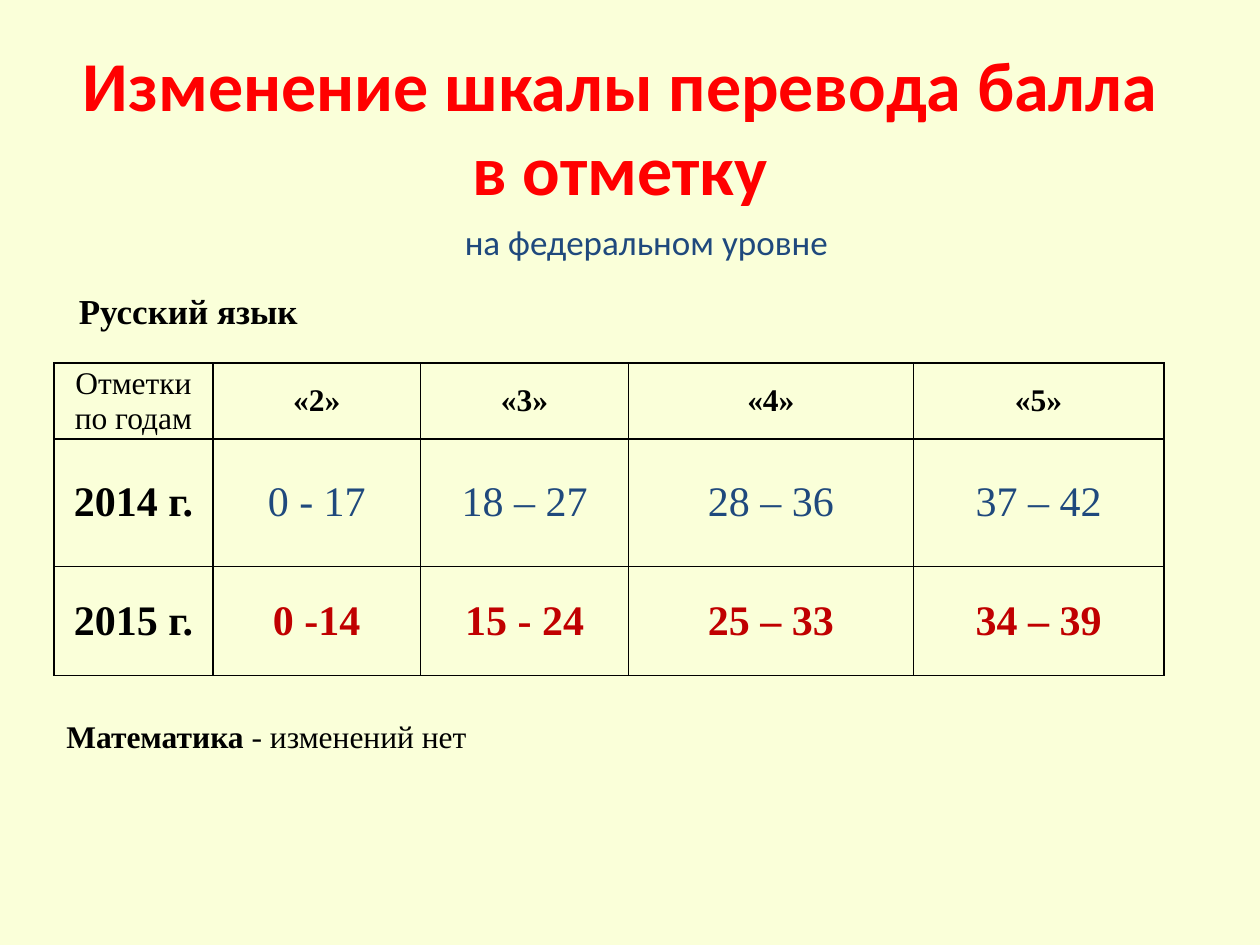
from lxml.etree import SubElement
from pptx import Presentation
from pptx.dml.color import RGBColor
from pptx.enum.text import MSO_ANCHOR, PP_ALIGN
from pptx.oxml.ns import qn
from pptx.util import Cm, Pt

CREAM = RGBColor(0xFA, 0xFF, 0xD9)
RED = RGBColor(0xFF, 0x00, 0x00)
DARK_RED = RGBColor(0xC0, 0x00, 0x00)
NAVY = RGBColor(0x1F, 0x49, 0x7D)
BLACK = RGBColor(0x00, 0x00, 0x00)
SANS, SERIF = "Calibri", "Times New Roman"

COLUMN_WIDTHS = (3.2, 4.19, 4.19, 5.74, 5.05)
ROW_HEIGHTS = (1.4, 2.57, 2.2)
GRADES = ("«2»", "«3»", "«4»", "«5»")
SCORES_2014 = ("0 - 17", "18 – 27", "28 – 36", "37 – 42")
SCORES_2015 = ("0 -14", "15 - 24", "25 – 33", "34 – 39")


def add_run(paragraph, text, size, color, font=SERIF, bold=False):
    run = paragraph.add_run()
    run.text = text
    run.font.name = font
    run.font.size = Pt(size)
    run.font.bold = bold
    run.font.color.rgb = color


def add_text(slide, box, runs, align=PP_ALIGN.LEFT, anchor=MSO_ANCHOR.TOP, wrap=True):
    """Place one paragraph in a box (left, top, width, height in cm)."""
    frame = slide.shapes.add_textbox(*map(Cm, box)).text_frame
    frame.word_wrap = wrap
    frame.vertical_anchor = anchor
    paragraph = frame.paragraphs[0]
    paragraph.alignment = align
    for run in runs:
        add_run(paragraph, **run)


def add_heading(slide, left, top, width):
    # Title, with the level it applies to underneath
    title = dict(text="Изменение шкалы перевода балла в отметку",
                 size=40, color=RED, font=SANS, bold=True)
    add_text(slide, (left, top, width, 3.23), [title],
             PP_ALIGN.CENTER, MSO_ANCHOR.BOTTOM)
    level = dict(text="на федеральном уровне", size=20, color=NAVY, font=SANS)
    add_text(slide, (left + 7.82, top + 3.2, 7.9, 1.12), [level], wrap=False)


def style_cell(cell):
    cell.margin_left = cell.margin_right = Cm(0.1)
    cell.margin_top = cell.margin_bottom = 0
    cell.vertical_anchor = MSO_ANCHOR.MIDDLE
    properties = cell._tc.get_or_add_tcPr()
    for side in ("a:lnL", "a:lnR", "a:lnT", "a:lnB"):
        border = SubElement(properties, qn(side), w=str(Pt(1)))
        fill = SubElement(border, qn("a:solidFill"))
        SubElement(fill, qn("a:srgbClr"), val=str(BLACK))
    cell.fill.background()


def add_score_table(slide, left, top):
    # Each row: label, label size, label bold, values, value size, colour, bold
    rows = (
        ("Отметки по годам", 18, False, GRADES, 18, BLACK, True),
        ("2014 г.", 24, True, SCORES_2014, 24, NAVY, False),
        ("2015 г.", 24, True, SCORES_2015, 24, DARK_RED, True),
    )
    table = slide.shapes.add_table(
        len(rows), len(COLUMN_WIDTHS), Cm(left), Cm(top),
        Cm(sum(COLUMN_WIDTHS)), Cm(sum(ROW_HEIGHTS))).table
    table.first_row = table.horz_banding = False
    for column, width in zip(table.columns, COLUMN_WIDTHS):
        column.width = Cm(width)
    for row, height in zip(table.rows, ROW_HEIGHTS):
        row.height = Cm(height)

    for r, (label, label_size, label_bold, values, size, color, bold) in enumerate(rows):
        entries = [(label, label_size, BLACK, SERIF, label_bold)]
        entries += [(value, size, color, SERIF, bold) for value in values]
        for c, entry in enumerate(entries):
            cell = table.cell(r, c)
            style_cell(cell)
            paragraph = cell.text_frame.paragraphs[0]
            paragraph.alignment = PP_ALIGN.CENTER
            add_run(paragraph, *entry)


def add_russian_section(slide, left, top):
    # Subject name above its table
    subject = dict(text="Русский язык", size=20, color=BLACK, bold=True)
    add_text(slide, (left + 0.25, top, 4.95, 1.12), [subject], wrap=False)
    add_score_table(slide, left, top + 1.61)


def add_maths_note(slide, left, top, width):
    add_text(slide, (left, top, width, 1.93), [
        dict(text="Математика", size=18, color=BLACK, bold=True),
        dict(text=" - изменений нет", size=18, color=BLACK),
    ])


def main():
    deck = Presentation()
    deck.slide_width, deck.slide_height = Cm(25.4), Cm(19.05)
    slide = deck.slides.add_slide(deck.slide_layouts[6])
    slide.background.fill.solid()
    slide.background.fill.fore_color.rgb = CREAM

    add_heading(slide, 1.3, 1.12, 22.4)
    add_russian_section(slide, 1.09, 5.71)
    add_maths_note(slide, 1.09, 14.33, 22.4)
    deck.save("out.pptx")


if __name__ == "__main__":
    main()
